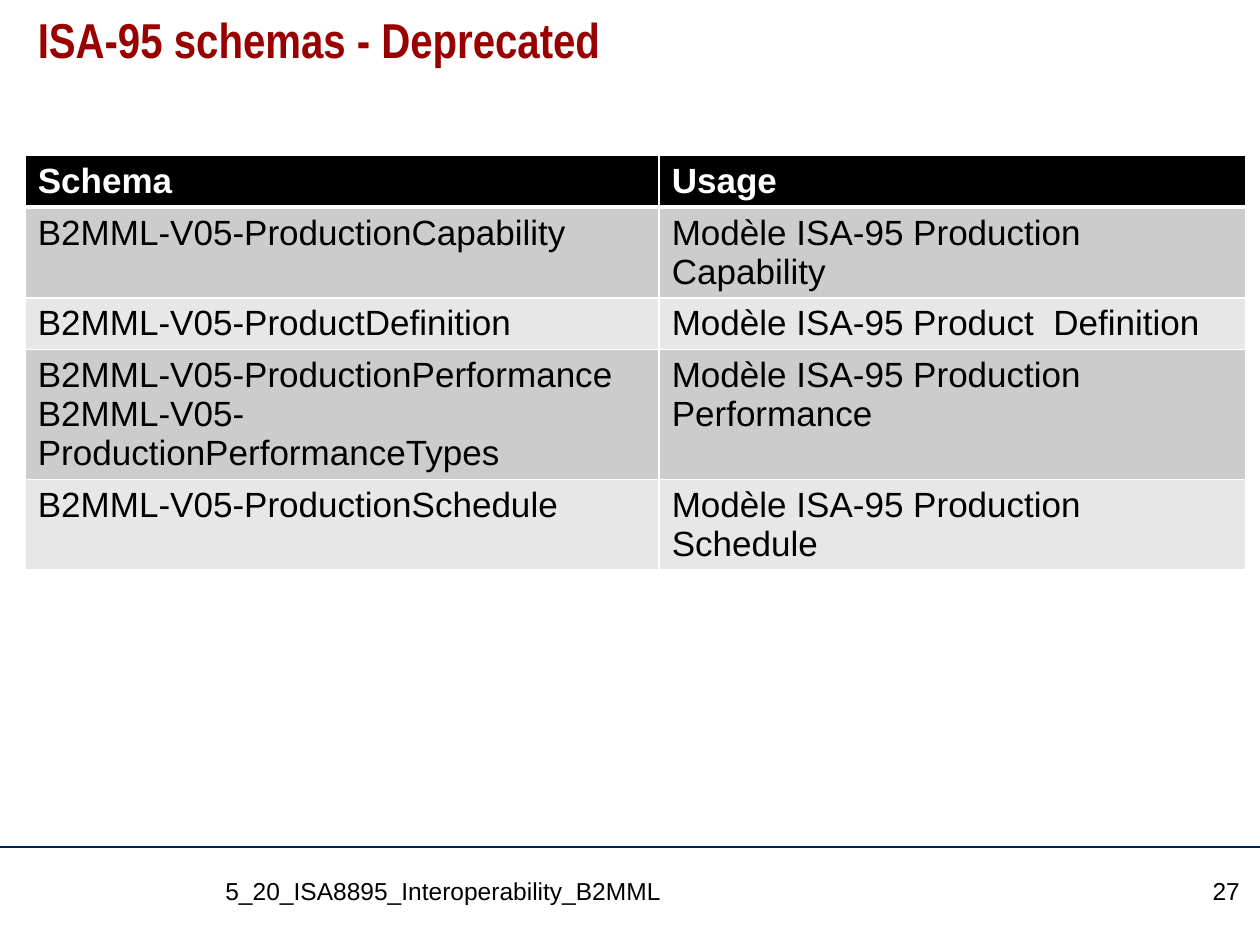
from lxml import etree
from pptx import Presentation
from pptx.dml.color import RGBColor
from pptx.enum import text
from pptx.oxml import ns
from pptx.util import Pt

# Content
TITLE = "ISA-95 schemas - Deprecated"
ROWS = [
    ("Schema", "Usage"),
    ("B2MML-V05-ProductionCapability", "Modèle ISA-95 Production Capability"),
    ("B2MML-V05-ProductDefinition", "Modèle ISA-95 Product  Definition"),
    ("B2MML-V05-ProductionPerformance\nB2MML-V05-ProductionPerformanceTypes",
     "Modèle ISA-95 Production Performance"),
    ("B2MML-V05-ProductionSchedule", "Modèle ISA-95 Production Schedule"),
]
LEFT, RIGHT = text.PP_ALIGN.LEFT, text.PP_ALIGN.RIGHT
FOOTERS = [  # wording, left, width, alignment
    ("5_20_ISA8895_Interoperability_B2MML", 121.7, 519, LEFT),
    ("27", 649.4, 66.2, RIGHT),
]

# Formats
TITLE_FONT = {"name": "Arial Narrow", "size": Pt(28), "bold": True}
TABLE_FONT = {"name": "Arial", "size": Pt(20)}
FOOTER_FONT = {"name": "Arial", "size": Pt(14), "bold": False}
HEADER_FILL, BAND_FILLS = "000000", ("CCCCCC", "E7E7E7")
COLUMN_WIDTHS = (362.3, 335)
ROW_HEIGHT = 29.2


def color(hex_string):
    return RGBColor.from_string(hex_string)


def write(frame, wording, font, font_color, alignment=LEFT):
    frame.word_wrap = True
    frame.vertical_anchor = text.MSO_ANCHOR.TOP
    frame.text = wording
    for paragraph in frame.paragraphs:
        paragraph.alignment = alignment
        for run in paragraph.runs:
            for name, value in font.items():
                setattr(run.font, name, value)
            run.font.color.rgb = color(font_color)


def add_borders(cell, widths, hex_string="FFFFFF"):
    properties = cell._tc.get_or_add_tcPr()
    for side, width in zip("LRTB", widths):
        line = etree.SubElement(properties, ns.qn(f"a:ln{side}"), w=str(Pt(width)))
        fill = etree.SubElement(line, ns.qn("a:solidFill"))
        etree.SubElement(fill, ns.qn("a:srgbClr"), val=hex_string)


presentation = Presentation()
presentation.slide_width, presentation.slide_height = Pt(720), Pt(540)
slide = presentation.slides.add_slide(presentation.slide_layouts[5])

# Footer rule
rule = slide.shapes.add_connector(1, Pt(0), Pt(484), Pt(720), Pt(484))
rule.line.color.rgb = color("002060")
rule.line.width = Pt(0.75)
etree.SubElement(rule._element.spPr, ns.qn("a:effectLst"))

# Title
title = slide.shapes.title
title.left, title.top, title.width, title.height = Pt(14.4), Pt(5.8), Pt(692), Pt(59.8)
write(title.text_frame, TITLE, TITLE_FONT, "990000")
title.text_frame.paragraphs[0].line_spacing = 0.9

# Schema table
table = slide.shapes.add_table(
    len(ROWS), len(COLUMN_WIDTHS), Pt(14.4), Pt(88.8),
    Pt(sum(COLUMN_WIDTHS)), Pt(ROW_HEIGHT * len(ROWS))).table
for column, width in zip(table.columns, COLUMN_WIDTHS):
    column.width = Pt(width)
for row_index, row in enumerate(ROWS):
    table.rows[row_index].height = Pt(ROW_HEIGHT)
    header = row_index == 0
    fill_color = HEADER_FILL if header else BAND_FILLS[(row_index - 1) % 2]
    for column_index, wording in enumerate(row):
        cell = table.cell(row_index, column_index)
        write(cell.text_frame, wording, {**TABLE_FONT, "bold": header},
              "FFFFFF" if header else "000000")
        add_borders(cell, (1, 1, 3 if row_index == 1 else 1, 3 if header else 1))
        cell.fill.solid()
        cell.fill.fore_color.rgb = color(fill_color)

# Footer texts
for wording, left, width, alignment in FOOTERS:
    box = slide.shapes.add_textbox(Pt(left), Pt(496.8), Pt(width), Pt(32.4))
    write(box.text_frame, wording, FOOTER_FONT, "000000", alignment)

presentation.save("out.pptx")
